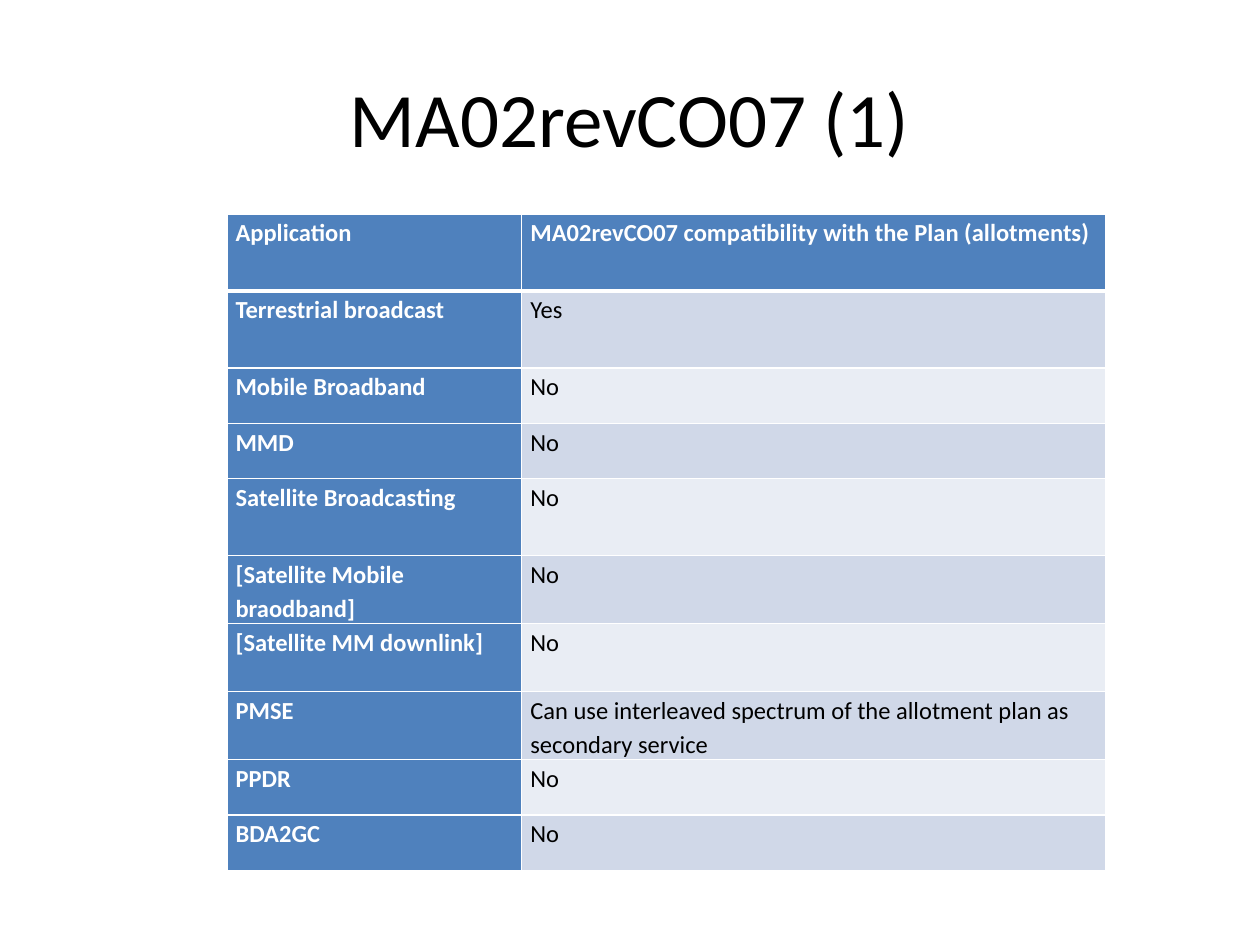
from lxml import etree
from pptx import Presentation
from pptx import util as u
from pptx.dml.color import RGBColor
from pptx.enum import text
from pptx.oxml import ns

WHITE = RGBColor(0xFF, 0xFF, 0xFF)
BLACK = RGBColor(0, 0, 0)
BLUE = RGBColor(0x4F, 0x81, 0xBD)
BANDS = RGBColor(0xE9, 0xED, 0xF4), RGBColor(0xD0, 0xD8, 0xE8)

# Row height in inches, application, compatibility
ROWS = [
    (0.61, "Application", "MA02revCO07 compatibility with the Plan (allotments)"),
    (0.61, "Terrestrial broadcast", "Yes"),
    (0.44, "Mobile Broadband", "No"),
    (0.44, "MMD", "No"),
    (0.61, "Satellite Broadcasting", "No"),
    (0.54, "[Satellite Mobile braodband]", "No"),
    (0.54, "[Satellite MM downlink]", "No"),
    (0.54, "PMSE", "Can use interleaved spectrum of the allotment plan as "
                   "secondary service"),
    (0.44, "PPDR", "No"),
    (0.44, "BDA2GC", "No"),
]
COLS = 2.34, 4.64


def style(para, size, color, bold):
    for key, val in dict(name="Calibri", size=u.Pt(size), bold=bold).items():
        setattr(para.runs[0].font, key, val)
    para.runs[0].font.color.rgb = color


def edge(cell, side, width):
    props = cell._tc.get_or_add_tcPr()
    line = etree.SubElement(props, ns.qn("a:ln" + side), w=str(u.Pt(width)))
    fill = etree.SubElement(line, ns.qn("a:solidFill"))
    etree.SubElement(fill, ns.qn("a:srgbClr"), val=str(WHITE))


deck = Presentation()
deck.slide_width, deck.slide_height = u.Inches(10), u.Inches(7.5)
wide, high = deck.slide_width, deck.slide_height
slide = deck.slides.add_slide(deck.slide_layouts[6])

# Title
box = slide.shapes.add_textbox(int(wide * 0.05), int(high * 0.04),
                               int(wide * 0.9), u.Inches(1.25))
frame = box.text_frame
for key, val in dict(text="MA02revCO07 (1)", word_wrap=True,
                     vertical_anchor=text.MSO_ANCHOR.MIDDLE).items():
    setattr(frame, key, val)
frame.paragraphs[0].alignment = text.PP_ALIGN.CENTER
style(frame.paragraphs[0], 44, BLACK, False)

# Table grid
table = slide.shapes.add_table(
    len(ROWS), len(COLS), int(wide * 0.18), u.Inches(1.7),
    u.Inches(sum(COLS)), u.Inches(sum(row[0] for row in ROWS))).table
table.first_col = True
for col, size in zip(table.columns, COLS):
    col.width = u.Inches(size)

# Cells: blue header row and first column, banded body
PAD = dict(margin_left=u.Inches(0.07), margin_right=u.Inches(0.07),
           margin_top=0, margin_bottom=0)
for r, (tall, *words) in enumerate(ROWS):
    table.rows[r].height = u.Inches(tall)
    for c, word in enumerate(words):
        cell = table.cell(r, c)
        head = r == 0 or c == 0
        cell.text = word
        for key, val in PAD.items():
            setattr(cell, key, val)
        for side in "LRTB":
            thick = (r, side) in ((0, "B"), (1, "T"))
            edge(cell, side, 3 if thick else 1)
        cell.fill.solid()
        cell.fill.fore_color.rgb = BLUE if head else BANDS[r % 2]
        para = cell.text_frame.paragraphs[0]
        para.line_spacing = 1.15
        style(para, 14, WHITE if head else BLACK, head)

deck.save("out.pptx")
